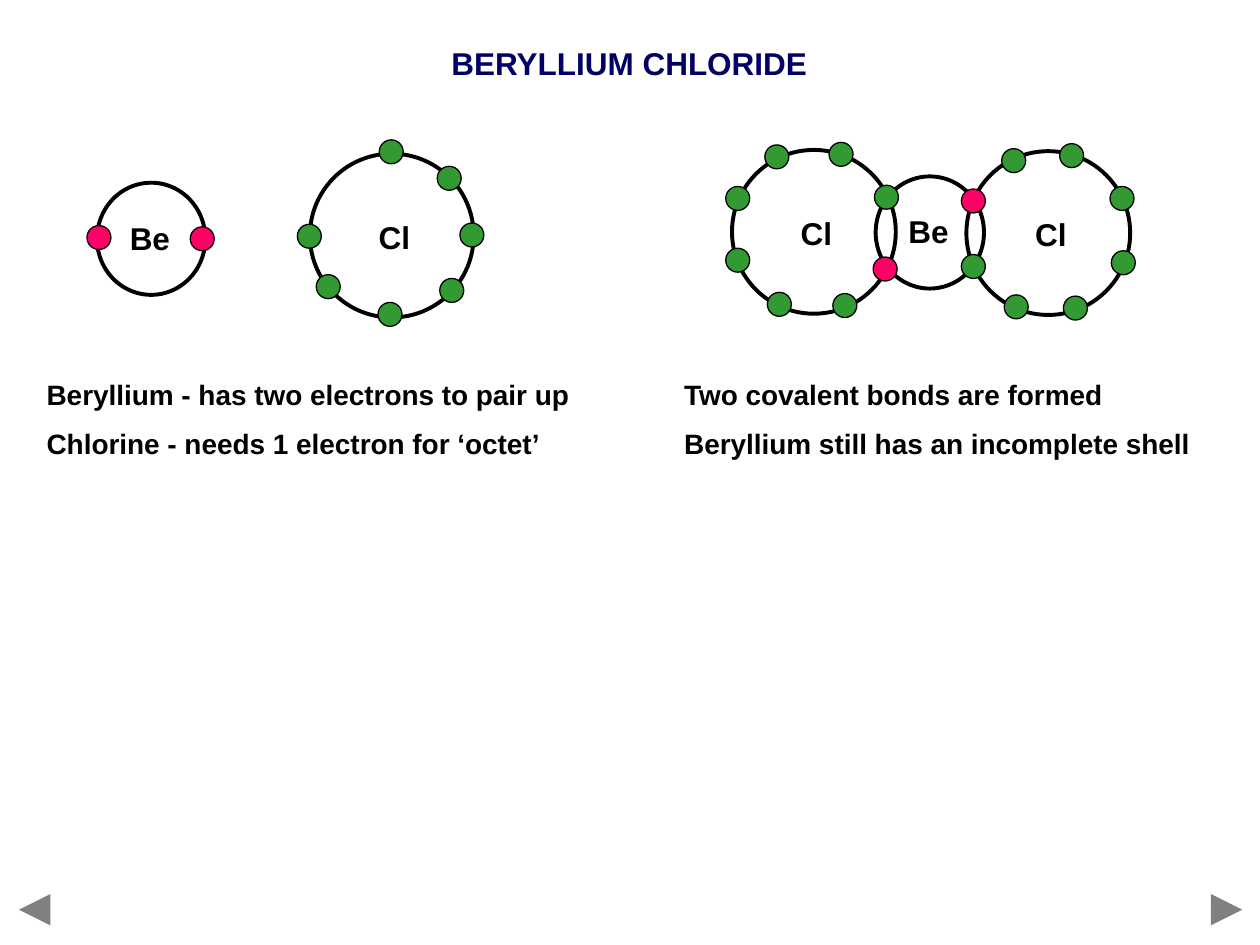
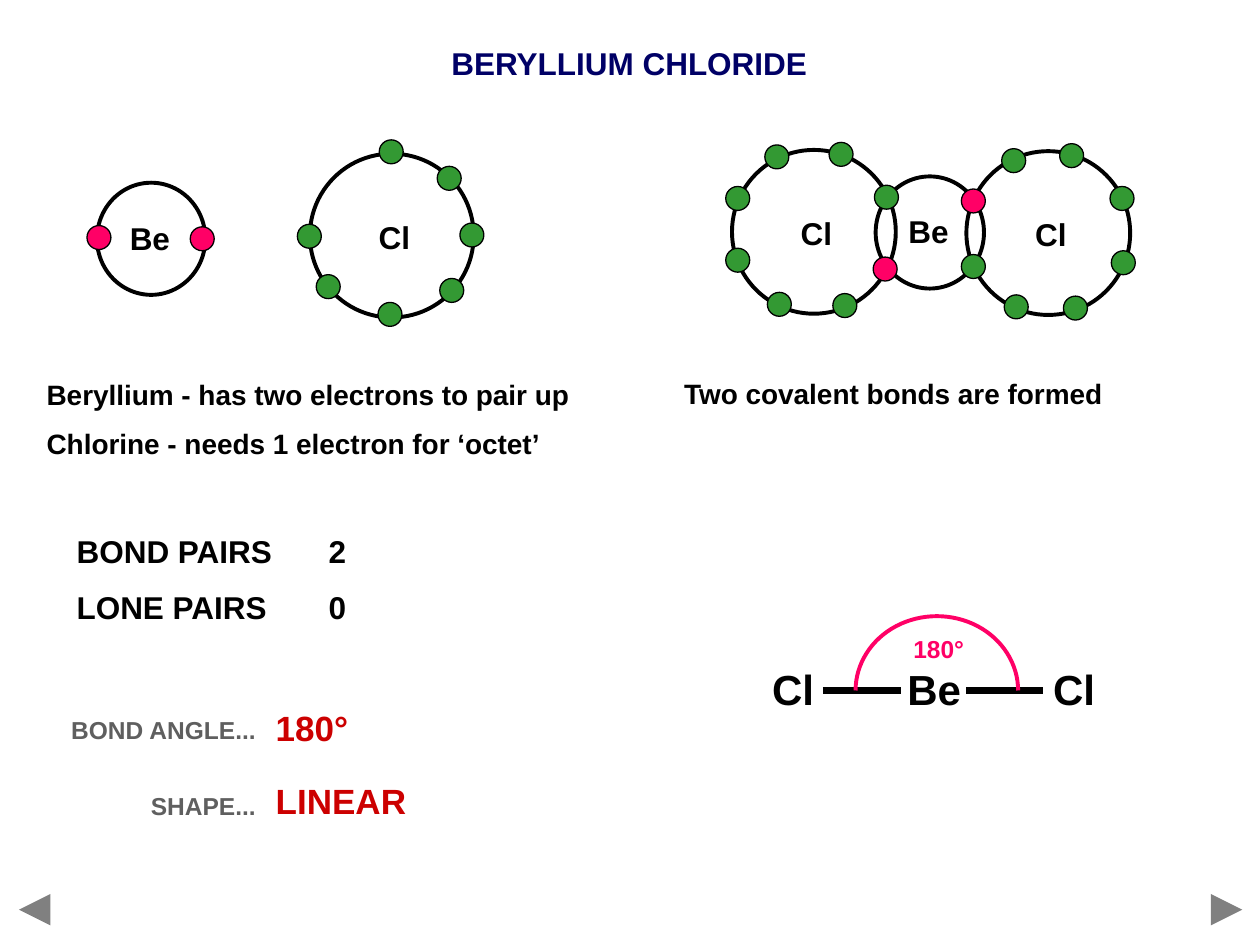
"""Build two slides on the bonding and shape of beryllium chloride."""
from lxml import etree
from pptx import Presentation
from pptx.dml.color import RGBColor
from pptx.enum import shapes, text
from pptx.oxml import ns
from pptx.util import Inches, Pt

FONT = "Arial"
BLACK = RGBColor(0x00, 0x00, 0x00)
NAVY = RGBColor(0x00, 0x00, 0x66)
GREEN = RGBColor(0x33, 0x99, 0x33)
PINK = RGBColor(0xFF, 0x00, 0x66)
RED = RGBColor(0xCC, 0x00, 0x00)
GREY = RGBColor(0x80, 0x80, 0x80)
DARK_GREY = RGBColor(0x5F, 0x5F, 0x5F)
LEFT, CENTER, RIGHT = text.PP_ALIGN.LEFT, text.PP_ALIGN.CENTER, text.PP_ALIGN.RIGHT

TITLE = "BERYLLIUM CHLORIDE"
TITLE_AT = (3.48, 0.3, 3.03, 0.4)
ARROWS = [(9.65, 9.86), (0.36, 0.15)]
ARROW_Y = 7.22

LEFT_NOTES = ["Beryllium - has two electrons to pair up", "Chlorine - needs 1 electron for ‘octet’"]
RIGHT_NOTES = ["Two covalent bonds are formed", "Beryllium still has an incomplete shell"]
NOTES_TOP = 2.94
NOTE_HEIGHTS = {1: 0.37, 2: 0.77}
NOTE_COLUMNS = [(0.27, 4.88), (5.33, 4.31)]

ELECTRON = 0.19
SHELLS = {"Be": (0.86, 0.89), "Cl": (1.3, 1.3)}
LABEL_SHIFTS = {"Be": (-0.01, -0.01), "Cl": (0.02, 0.01)}
MOLECULES = [
    {
        "atoms": [("Cl", 2.46, 1.22)],
        GREEN: [(3.01, 1.11), (2.36, 1.78), (3.65, 1.77), (3, 2.4), (3.49, 2.21),
                (2.51, 2.18), (3.47, 1.32)],
        PINK: [],
    },
    {
        "atoms": [("Be", 0.77, 1.45)],
        GREEN: [],
        PINK: [(0.69, 1.79), (1.51, 1.8)],
    },
    {
        "atoms": [("Be", 6.95, 1.4), ("Cl", 7.67, 1.2), ("Cl", 5.81, 1.19)],
        GREEN: [(8.44, 2.35), (7.95, 1.18), (8.81, 1.48), (7.97, 2.34), (8.82, 1.99),
                (7.63, 2.02), (8.41, 1.14), (6.07, 1.15), (5.76, 1.48), (6.94, 1.47),
                (6.61, 2.33), (6.09, 2.32), (5.76, 1.97), (6.58, 1.13)],
        PINK: [(7.63, 1.5), (6.93, 2.04)],
    },
]

LINEAR_ATOMS = [("Cl", 6.03, 0.53), ("Be", 7.1, 0.63), ("Cl", 8.26, 0.53)]
BONDS = [(6.53, 7.15), (7.67, 8.28)]
BOND_Y = 5.48
ANGLE_ARC = (6.79, 4.89, 1.29, 1.18)
ANGLE_AT = (7.15, 4.98, 0.6, 0.33)

PAIRS = ["BOND PAIRS\t2", "LONE PAIRS\t0"]
PAIRS_AT = (0.51, 4.17, 3.5, 0.85)
PAIRS_TAB = 3
PROMPTS = ["BOND ANGLE...", "SHAPE..."]
PROMPTS_AT = (0.33, 5.35, 1.8, 1.22)
ANSWERS = ["180°", "LINEAR"]
ANSWERS_AT = (2.09, 5.43, 1.5, 1.16)


def write(box, lines, size, color, align=LEFT, gap=0, leading=None, tab=None):
    """Fill a text box or placeholder with plain bold paragraphs."""
    frame = box.text_frame
    frame.auto_size = text.MSO_AUTO_SIZE.NONE
    frame.vertical_anchor = text.MSO_ANCHOR.MIDDLE
    frame.word_wrap = align != CENTER
    frame.text = "\n".join(lines)
    for index, para in enumerate(frame.paragraphs):
        properties = para._p.get_or_add_pPr()
        properties.set("marL", "0")
        properties.set("indent", "0")
        etree.SubElement(properties, ns.qn("a:buNone"))
        if tab:
            stops = etree.SubElement(properties, ns.qn("a:tabLst"))
            etree.SubElement(stops, ns.qn("a:tab"), pos=str(Inches(tab)), algn="l")
        para.alignment = align
        para.space_before = Pt(gap if index else 0)
        if leading:
            para.line_spacing = Pt(leading)
        para.font.name, para.font.size, para.font.bold = FONT, Pt(size), True
        para.font.color.rgb = color


def place(box, area):
    """Move and size a placeholder."""
    box.left, box.top, box.width, box.height = map(Inches, area)


def add_text(canvas, area, lines, size, color, **style):
    """Add a text box."""
    write(canvas.add_textbox(*map(Inches, area)), lines, size, color, **style)


def add_outline(canvas, kind, area, color, width, fill=None):
    """Add an outlined shape, hollow unless a fill is given."""
    shape = canvas.add_shape(kind, *map(Inches, area))
    shape.shadow.inherit = False
    shape.line.color.rgb, shape.line.width = color, Pt(width)
    if fill is None:
        shape.fill.background()
    else:
        shape.fill.solid()
        shape.fill.fore_color.rgb = fill
    return shape


def add_line(canvas, start, end, y, color, width):
    """Add a horizontal line without a shadow."""
    line = canvas.add_connector(shapes.MSO_CONNECTOR.STRAIGHT, *map(Inches, (start, y, end, y)))
    line.line.color.rgb, line.line.width = color, Pt(width)
    etree.SubElement(line._element.spPr, ns.qn("a:effectLst"))
    return line


def add_molecule(page, molecule):
    """Draw shells, atom labels and electrons as one group."""
    canvas = page.shapes.add_group_shape().shapes
    oval = shapes.MSO_SHAPE.OVAL
    for symbol, left, top in molecule["atoms"]:
        width, height = SHELLS[symbol]
        add_outline(canvas, oval, (left, top, width, height), BLACK, 2.25)
        shift_x, shift_y = LABEL_SHIFTS[symbol]
        label = (left + width / 2 + shift_x - 0.25, top + height / 2 + shift_y - 0.2, 0.5, 0.4)
        add_text(canvas, label, [symbol], 18, BLACK, align=CENTER)
    for color in (GREEN, PINK):
        for left, top in molecule[color]:
            add_outline(canvas, oval, (left, top, ELECTRON, ELECTRON), BLACK, 0.75, color)


def add_page(deck, right_notes):
    """Add a slide with the title, arrows, molecules and notes."""
    page = deck.slides.add_slide(deck.slide_layouts.get_by_name("Two Content"))
    title, *bodies = page.placeholders
    place(title, TITLE_AT)
    write(title, [TITLE], 18, NAVY, align=CENTER)
    for body, (left, width), lines in zip(bodies, NOTE_COLUMNS, (LEFT_NOTES, right_notes)):
        place(body, (left, NOTES_TOP, width, NOTE_HEIGHTS[len(lines)]))
        write(body, lines, 16, BLACK, gap=9)
    for start, end in ARROWS:
        arrow = add_line(page.shapes, start, end, ARROW_Y, GREY, 6)
        etree.SubElement(arrow.line._get_or_add_ln(), ns.qn("a:tailEnd"), type="triangle")
    for molecule in MOLECULES:
        add_molecule(page, molecule)
    return page


def add_linear_shape(page):
    """Draw the linear molecule with its bond angle."""
    canvas = page.shapes.add_group_shape().shapes
    for start, end in BONDS:
        add_line(canvas, start, end, BOND_Y, BLACK, 4.5)
    for symbol, left, width in LINEAR_ATOMS:
        add_text(canvas, (left, 5.22, width, 0.5), [symbol], 24, BLACK, align=CENTER)
    arc = add_outline(canvas, shapes.MSO_SHAPE.ARC, ANGLE_ARC, PINK, 2.25)
    arc.adjustments[0], arc.adjustments[1] = 108, 0
    add_text(canvas, ANGLE_AT, ["180°"], 14, PINK, align=CENTER)


def main():
    """Build and save the deck."""
    deck = Presentation()
    deck.slide_width, deck.slide_height = Inches(10), Inches(7.5)
    add_page(deck, RIGHT_NOTES)
    page = add_page(deck, RIGHT_NOTES[:1])
    add_linear_shape(page)
    add_text(page.shapes, PAIRS_AT, PAIRS, 18, BLACK, gap=10, tab=PAIRS_TAB)
    add_text(page.shapes, PROMPTS_AT, PROMPTS, 14, DARK_GREY, align=RIGHT, gap=7, leading=36)
    add_text(page.shapes, ANSWERS_AT, ANSWERS, 20, RED, gap=10, leading=32)
    deck.save("out.pptx")


if __name__ == "__main__":
    main()
